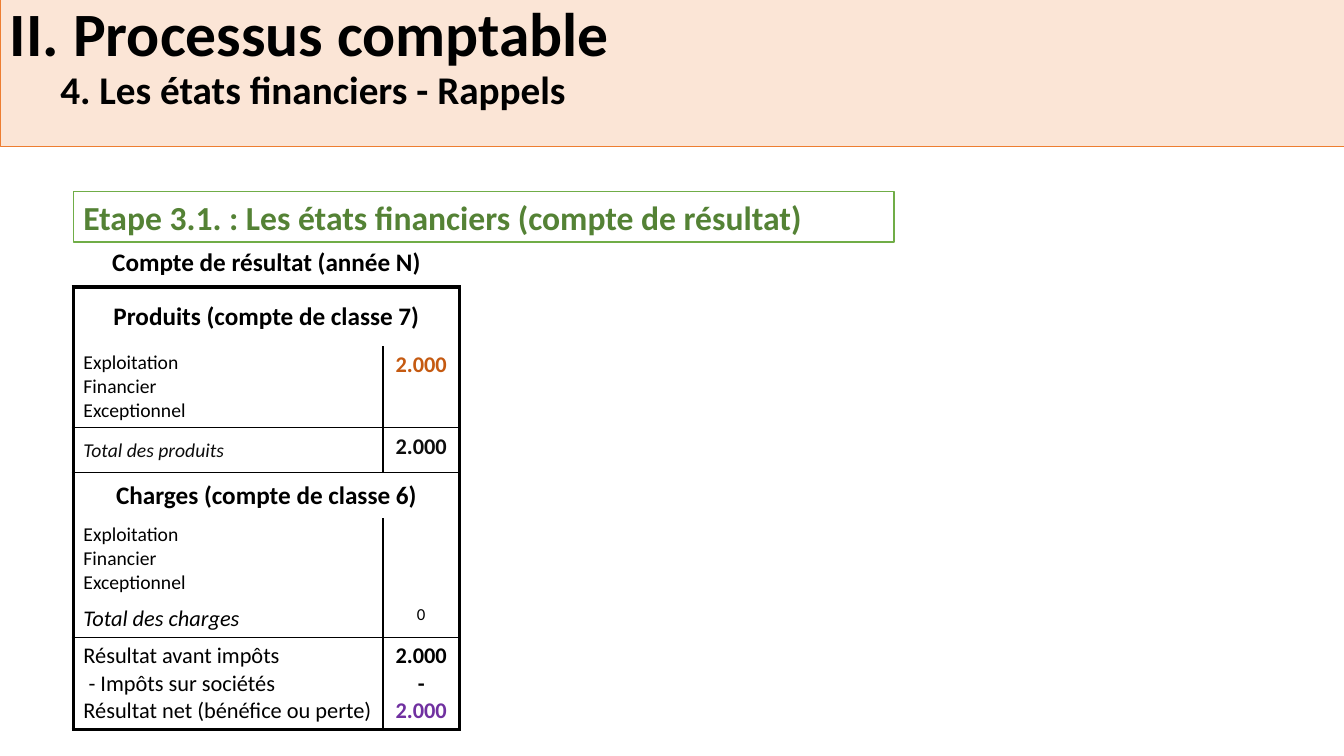
from lxml.etree import SubElement
from pptx import Presentation
from pptx.dml.color import RGBColor
from pptx.enum.shapes import MSO_SHAPE
from pptx.enum.text import MSO_ANCHOR, PP_ALIGN
from pptx.oxml.ns import qn
from pptx.util import Cm, Pt

TITLE = "II. Processus comptable"
SUBTITLE = "4. Les états financiers - Rappels"
STEP = "Etape 3.1. : Les états financiers (compte de résultat)"

BLACK = "000000"
CATEGORIES = ["Exploitation", "Financier", "Exceptionnel"]
RESULTS = ["Résultat avant impôts", " - Impôts sur sociétés", "Résultat net (bénéfice ou perte)"]
HEADING = dict(size=18, bold=True, align=PP_ALIGN.CENTER)
AMOUNT = dict(size=16, bold=True, align=PP_ALIGN.CENTER)
MIDDLE = MSO_ANCHOR.MIDDLE
TOP = MSO_ANCHOR.TOP

# One row: height in cm, bottom border in points, anchor of the first cell,
# then its cells, each a list of (text, format); a single cell spans both columns
ROWS = [
    (1.14, 3, TOP, [[("Compte de résultat (année N)", HEADING)]]),
    (1.48, 0, MIDDLE, [[("Produits (compte de classe 7)", HEADING)]]),
    (2.04, 1, TOP, [[(name, dict(size=14)) for name in CATEGORIES],
                    [("2.000", dict(AMOUNT, color="C55A11"))]]),
    (1.14, 1, MIDDLE, [[("Total des produits", dict(size=14, italic=True, color="0D0D0D"))],
                       [("2.000", dict(AMOUNT, color="0D0D0D"))]]),
    (1.14, 0, MIDDLE, [[("Charges (compte de classe 6)", HEADING)]]),
    (2.04, 0, TOP, [[(name, dict(size=14)) for name in CATEGORIES], []]),
    (0.94, 1, MIDDLE, [[("Total des charges", dict(size=16, italic=True))],
                       [("0", dict(size=12, align=PP_ALIGN.CENTER))]]),
    (2.27, 2.25, TOP, [[(name, dict(size=16)) for name in RESULTS],
                       [("2.000", AMOUNT), ("-", AMOUNT),
                        ("2.000", dict(AMOUNT, color="7030A0"))]]),
]
COLUMN_WIDTHS = [7.8, 1.93]
LEFT = 1.85
TABLE_TOP = 6.1
OUTER, INNER = 3, 1


def rgb(color):
    return RGBColor.from_string(color)


def write(paragraph, text, size, color=BLACK, bold=False, italic=False,
          align=PP_ALIGN.LEFT, spacing=None):
    paragraph.alignment = align
    paragraph.line_spacing = spacing
    run = paragraph.add_run()
    run.text = text
    font = run.font
    font.name, font.size, font.bold, font.italic = "Calibri", Pt(size), bold, italic
    font.color.rgb = rgb(color)


def fill_frame(frame, lines):
    """Write each (text, format) pair as one paragraph."""
    for index, (text, style) in enumerate(lines):
        paragraph = frame.add_paragraph() if index else frame.paragraphs[0]
        write(paragraph, text, **style)


def add_box(slide, left, top, width, height, fill, line, line_width, lines):
    shape = slide.shapes.add_shape(MSO_SHAPE.RECTANGLE, Cm(left), Cm(top), Cm(width), Cm(height))
    shape.shadow.inherit = False
    shape.fill.solid()
    shape.fill.fore_color.rgb = rgb(fill)
    shape.line.color.rgb = rgb(line)
    shape.line.width = Pt(line_width)
    shape.text_frame.word_wrap = True
    shape.text_frame.vertical_anchor = TOP
    fill_frame(shape.text_frame, lines)


def set_borders(cell, left, right, top, bottom):
    """Draw the four sides in points; 0 means no line."""
    properties = cell._tc.get_or_add_tcPr()
    for side, width in (("L", left), ("R", right), ("T", top), ("B", bottom)):
        border = SubElement(properties, qn(f"a:ln{side}"), w=str(Pt(width)))
        if width:
            solid = SubElement(border, qn("a:solidFill"))
            SubElement(solid, qn("a:srgbClr"), val=BLACK)
        else:
            SubElement(border, qn("a:noFill"))


def add_income_statement(slide):
    frame = slide.shapes.add_table(
        len(ROWS), len(COLUMN_WIDTHS), Cm(LEFT), Cm(TABLE_TOP),
        Cm(sum(COLUMN_WIDTHS)), Cm(sum(row[0] for row in ROWS)))
    table = frame.table
    table.first_row = table.horz_banding = False
    for column, width in zip(table.columns, COLUMN_WIDTHS):
        column.width = Cm(width)

    top = 0
    for index, (height, bottom, anchor, contents) in enumerate(ROWS):
        table.rows[index].height = Cm(height)
        first, last = table.cell(index, 0), table.cell(index, 1)
        outer = OUTER if index else 0
        spans = len(contents) == 1
        set_borders(first, outer, outer if spans else INNER, top, bottom)
        set_borders(last, 0 if spans else INNER, outer, top, bottom)
        if spans:
            first.merge(last)
        first.vertical_anchor = anchor
        for cell in (first, last):
            cell.fill.background()
        for cell, lines in zip((first, last), contents):
            fill_frame(cell.text_frame, lines)
        top = bottom


def main():
    presentation = Presentation()
    presentation.slide_width, presentation.slide_height = Cm(33.87), Cm(19.05)
    slide = presentation.slides.add_slide(presentation.slide_layouts[6])
    add_box(slide, LEFT, 4.83, 20.68, 1.27, "FFFFFF", "70AD47", 1,
            [(STEP, dict(size=24, bold=True, color="548235"))])
    add_income_statement(slide)
    add_box(slide, 0, -0.03, 33.87, 3.73, "FBE5D6", "ED7D31", 0.5,
            [(TITLE, dict(size=44, bold=True, spacing=0.9)),
             ("\t" + SUBTITLE, dict(size=28, bold=True, spacing=0.9))])
    presentation.save("out.pptx")


if __name__ == "__main__":
    main()
